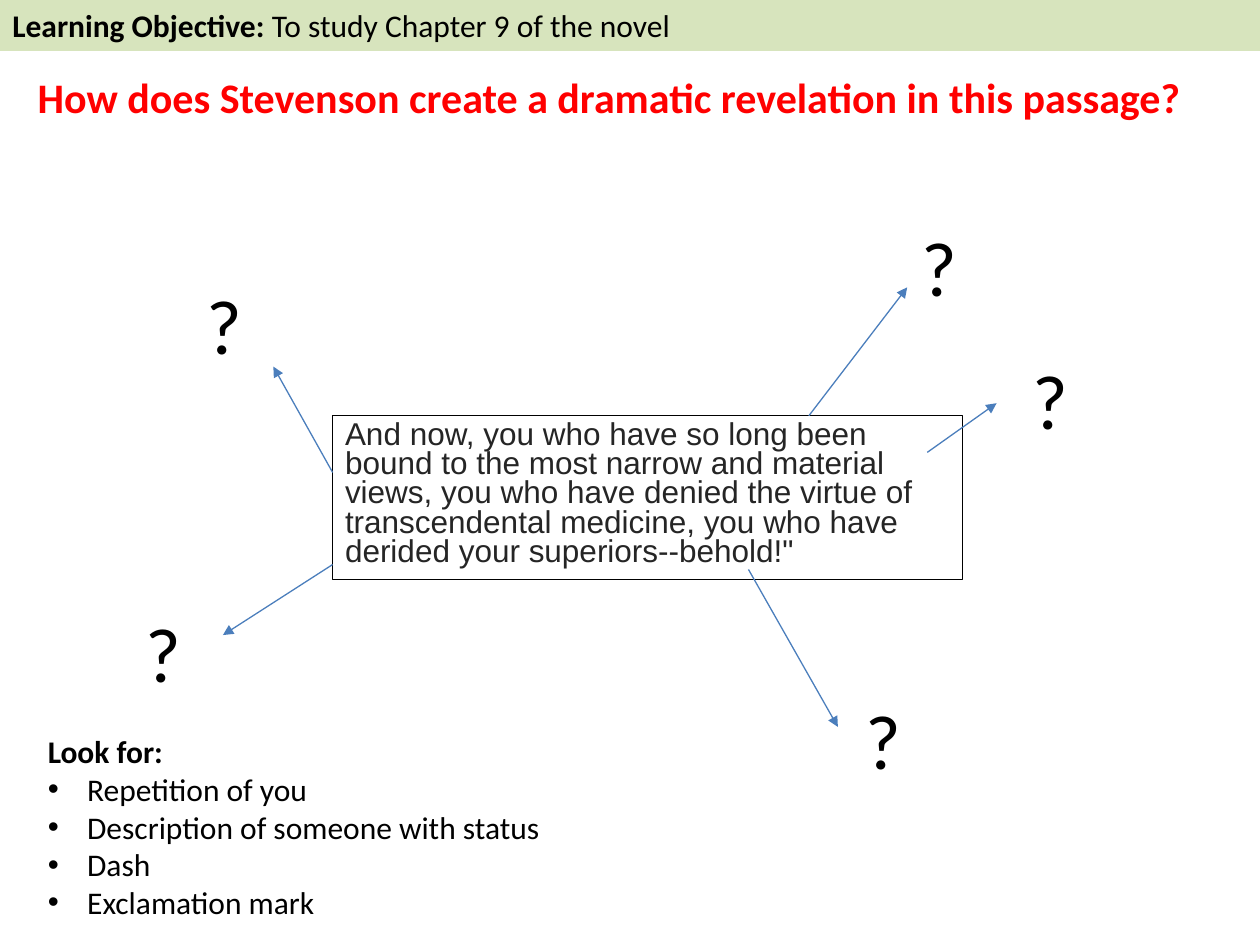
from lxml import etree
from pptx import Presentation
from pptx.dml.color import RGBColor
from pptx.enum.shapes import MSO_CONNECTOR, MSO_SHAPE
from pptx.enum.text import MSO_ANCHOR, PP_ALIGN
from pptx.oxml.ns import qn
from pptx.util import Pt

RECT = MSO_SHAPE.RECTANGLE
STRAIGHT = MSO_CONNECTOR.STRAIGHT
TOP = MSO_ANCHOR.TOP
LEFT = PP_ALIGN.LEFT

OBJECTIVE = [("Learning Objective: ", True), ("To study Chapter 9 of the novel", False)]
QUESTION = "How does Stevenson create a dramatic revelation in this passage?"
QUOTE = (
    "And now, you who have so long been bound to the most narrow and material "
    "views, you who have denied the virtue of transcendental medicine, you who "
    'have derided your superiors--behold!"'
)
HINT_TITLE = "Look for:"
HINTS = ["Repetition of you", "Description of someone with status", "Dash", "Exclamation mark"]
ARROWS = [
    ((462.2, 237.6), (518.4, 164.2)),
    ((529.9, 258.5), (569.5, 230.4)),
    ((190.1, 270), (156.2, 209.5)),
    ((190.1, 322.6), (127.4, 362.9)),
    ((427.7, 325.4), (478.8, 415.4)),
]
MARKS = [(519.8, 121.7), (583.2, 198), (110.9, 154.8), (76.3, 342.7), (487.4, 392.4)]
MARK_SIZE = (124.6, 60.5)
INDENT = 22.5


def rgb(value):
    return RGBColor.from_string(value)


def style(p, size, color="000000", bold=False, name="Calibri"):
    p.alignment = LEFT
    p.font.size = Pt(size)
    p.font.name = name
    p.font.bold = bold
    p.font.color.rgb = rgb(color)


def prepare(sp):
    tf = sp.text_frame
    tf.word_wrap = True
    tf.vertical_anchor = TOP
    return tf


def add_box(s, box, fill=None, line=None):
    sp = s.shapes.add_shape(RECT, *map(Pt, box))
    sp.shadow.inherit = False
    if fill:
        sp.fill.solid()
        sp.fill.fore_color.rgb = rgb(fill)
    else:
        sp.fill.background()
    if line:
        sp.line.color.rgb = rgb(line)
        sp.line.width = Pt(0.75)
    else:
        sp.line.fill.background()
    return prepare(sp)


def add_text(s, box):
    return prepare(s.shapes.add_textbox(*map(Pt, box)))


def add_arrow(s, start, end):
    sp = s.shapes.add_connector(STRAIGHT, *map(Pt, start + end))
    sp.line.color.rgb = rgb("4B7EBC")
    sp.line.width = Pt(0.75)
    etree.SubElement(sp.line._get_or_add_ln(), qn("a:tailEnd"), type="triangle")
    etree.SubElement(sp._element.spPr, qn("a:effectLst"))


def add_bullet(p):
    pPr = p._p.get_or_add_pPr()
    pPr.set("marL", str(Pt(INDENT)))
    pPr.set("indent", str(-Pt(INDENT)))
    font = etree.Element(qn("a:buFont"), typeface="Arial")
    char = etree.Element(qn("a:buChar"), char="•")
    pPr.insert_element_before(font, "a:defRPr")
    pPr.insert_element_before(char, "a:defRPr")


def main():
    prs = Presentation()
    prs.slide_width, prs.slide_height = Pt(720), Pt(540)
    s = prs.slides.add_slide(prs.slide_layouts[6])

    p = add_box(s, (0, 0, 720, 29.1), fill="D7E4BD").paragraphs[0]
    style(p, 18)
    for text, bold in OBJECTIVE:
        r = p.add_run()
        r.text = text
        r.font.bold = bold

    p = add_box(s, (190.1, 237.6, 360, 93.6), line="000000").paragraphs[0]
    p.text = QUOTE
    style(p, 18, "252525", name="Arial")
    p.line_spacing = Pt(16.8)
    p.space_before = p.space_after = Pt(6)

    p = add_box(s, (14.4, 37.4, 697.7, 36.3), fill="FFFFFF").paragraphs[0]
    p.text = QUESTION
    style(p, 24, "FF0000", bold=True)

    for start, end in ARROWS:
        add_arrow(s, start, end)

    for corner in MARKS:
        p = add_text(s, corner + MARK_SIZE).paragraphs[0]
        p.text = "?"
        style(p, 44)

    tf = add_text(s, (20.2, 414.7, 380.2, 116.6))
    p = tf.paragraphs[0]
    p.text = HINT_TITLE
    style(p, 18, bold=True)
    for hint in HINTS:
        p = tf.add_paragraph()
        p.text = hint
        style(p, 18)
        add_bullet(p)

    prs.save("out.pptx")


if __name__ == "__main__":
    main()
